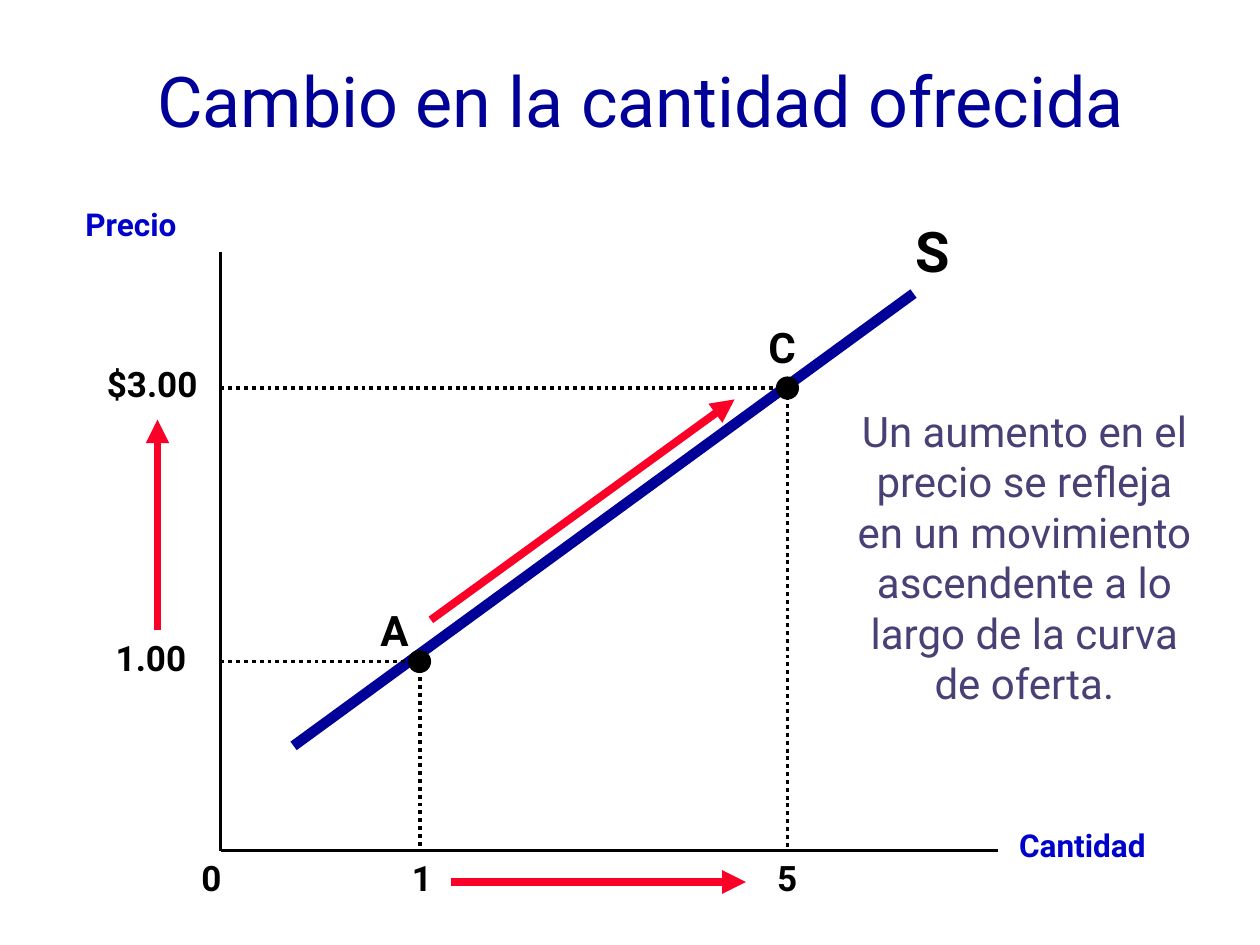
from lxml import etree
from pptx import Presentation
from pptx.dml.color import RGBColor
from pptx.enum import dml, shapes, text
from pptx.oxml.ns import qn
from pptx.util import Inches, Pt

BLACK = RGBColor(0x00, 0x00, 0x00)
WHITE = RGBColor(0xFF, 0xFF, 0xFF)
NAVY = RGBColor(0x00, 0x00, 0x99)
BLUE = RGBColor(0x00, 0x00, 0xCC)
RED = RGBColor(0xFC, 0x01, 0x28)
PURPLE = RGBColor(0x49, 0x40, 0x76)

ORIGIN_X, ORIGIN_Y = 1.75, 6.75
POINTS = [(3.33, 5.25), (6.25, 3.08)]  # A and C
DOT = 0.17

prs = Presentation()
prs.slide_width, prs.slide_height = Inches(10), Inches(7.5)
s = prs.slides.add_slide(prs.slide_layouts[6])


def add_line(x1, y1, x2, y2, color=BLACK, width=2.25, dash=None, arrow=False):
    ln = s.shapes.add_connector(shapes.MSO_CONNECTOR.STRAIGHT,
                                Inches(x1), Inches(y1), Inches(x2), Inches(y2))
    ln.line.color.rgb = color
    ln.line.width = Pt(width)
    if dash:
        ln.line.dash_style = dash
    if arrow:
        etree.SubElement(ln.line._get_or_add_ln(), qn("a:tailEnd"), type="triangle")
    etree.SubElement(ln._element.spPr, qn("a:effectLst"))


def add_text(words, x, y, w, h, size, color=BLACK, bold=True, align=None):
    sp = s.shapes.add_textbox(Inches(x), Inches(y), Inches(w), Inches(h))
    tf = sp.text_frame
    tf.word_wrap = True
    p = tf.paragraphs[0]
    p.alignment = align
    r = p.add_run()
    r.text = words
    for name, value in {"name": "Roboto", "size": Pt(size), "bold": bold}.items():
        setattr(r.font, name, value)
    r.font.color.rgb = color
    return sp


# Axes and supply curve
add_line(ORIGIN_X, 2, ORIGIN_X, ORIGIN_Y)
add_line(ORIGIN_X, ORIGIN_Y, 7.92, ORIGIN_Y)
add_line(2.33, 5.92, 7.25, 2.33, NAVY, 6)

# Dotted guides, then the points on the curve
for x, y in POINTS:
    add_line(ORIGIN_X, y, x, y, dash=dml.MSO_LINE.ROUND_DOT)
    add_line(x, y, x, ORIGIN_Y, dash=dml.MSO_LINE.ROUND_DOT)
for x, y in POINTS:
    dot = s.shapes.add_shape(shapes.MSO_SHAPE.OVAL, Inches(x - DOT / 2),
                             Inches(y - DOT / 2), Inches(DOT), Inches(DOT))
    dot.shadow.inherit = False
    dot.fill.solid()
    dot.fill.fore_color.rgb = BLACK
    dot.line.color.rgb = BLACK
    dot.line.width = Pt(1)

# Labels
for words, x, y, w, h, size, color in [
    ("Precio", 0.58, 1.58, 1.67, 0.4, 18, BLUE),
    ("Cantidad", 7.99, 6.51, 1.67, 0.4, 18, BLUE),
    ("0", 1.5, 6.75, 0.5, 0.43, 20, BLACK),
    ("1", 3.17, 6.75, 0.5, 0.43, 20, BLACK),
    ("5", 6.07, 6.75, 0.5, 0.43, 20, BLACK),
    ("1.00", 0.82, 5, 0.93, 0.43, 20, BLACK),
    ("$3.00", 0.75, 2.83, 1, 0.43, 20, BLACK),
    ("S", 7.17, 1.67, 0.67, 0.63, 32, BLACK),
    ("A", 2.92, 4.75, 0.42, 0.5, 24, BLACK),
    ("C", 6, 2.5, 0.42, 0.5, 24, BLACK),
]:
    add_text(words, x, y, w, h, size, color)

# Arrows for the rise in price, in quantity and along the curve
for ends in [(1.25, 5, 1.25, 3.33), (3.58, 7, 5.92, 7), (3.42, 4.92, 5.83, 3.17)]:
    add_line(*ends, RED, 4.5, arrow=True)

# Explanation and title
note = add_text("Un aumento en el precio se refleja en un movimiento ascendente "
                "a lo largo de la curva de oferta.",
                6.67, 3.17, 2.92, 2.5, 24, PURPLE, False, text.PP_ALIGN.CENTER)
note.fill.solid()
note.fill.fore_color.rgb = WHITE

title = add_text("Cambio en la cantidad ofrecida", 0.5, 0.17, 9.17, 1.33,
                 40, NAVY, False, text.PP_ALIGN.CENTER)
title.text_frame.vertical_anchor = text.MSO_ANCHOR.MIDDLE
title.text_frame.paragraphs[0].line_spacing = 0.9

prs.save("out.pptx")
